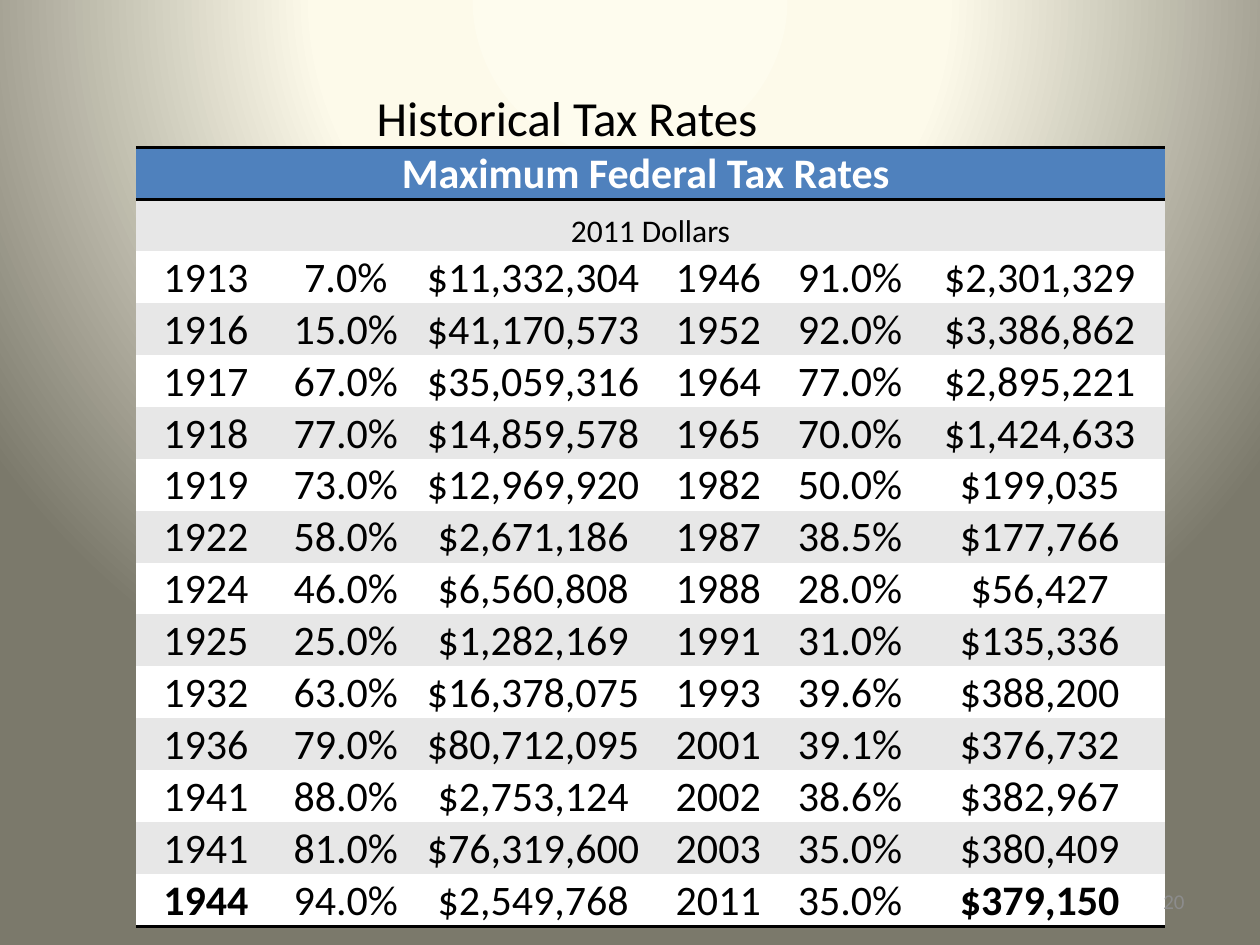
from dataclasses import dataclass

from pptx import Presentation
from pptx.dml.color import RGBColor
from pptx.enum.text import MSO_ANCHOR, PP_ALIGN
from pptx.oxml import parse_xml
from pptx.oxml.ns import nsdecls
from pptx.util import Cm, Pt


@dataclass(frozen=True)
class Theme:
    font: str = "Calibri"
    black: str = "000000"
    white: str = "FFFFFF"
    band: str = "E7E7E7"
    header: str = "4F81BD"
    muted: str = "8C8C8C"
    backdrop: tuple = ((0, "FEFCEE"), (40, "FDFAEA"), (100, "7B796B"))
    title_size: int = 28
    body_size: int = 24
    note_size: int = 18
    number_size: int = 12
    rule: int = 2


theme = Theme()


def write(tf, text, size, color, align=PP_ALIGN.CENTER, bold=False):
    p = tf.paragraphs[0]
    p.alignment = align
    r = p.add_run()
    r.text = text
    r.font.name = theme.font
    r.font.size = Pt(size)
    r.font.bold = bold
    r.font.color.rgb = RGBColor.from_string(color)


def add_rule(cell, side, index):
    cell._tc.get_or_add_tcPr().insert(index, parse_xml(
        f'<a:{side} {nsdecls("a")} w="{Pt(theme.rule)}"><a:solidFill>'
        f'<a:srgbClr val="{theme.black}"/></a:solidFill></a:{side}>'))


prs = Presentation()
prs.slide_width, prs.slide_height = Cm(25.4), Cm(19.05)
s = prs.slides.add_slide(prs.slide_layouts[6])

# Background: circular gradient centred above the slide
stops = "".join(f'<a:gs pos="{pos * 1000}"><a:srgbClr val="{color}"/></a:gs>'
                for pos, color in theme.backdrop)
s.element.cSld.insert(0, parse_xml(
    f'<p:bg {nsdecls("p", "a")}><p:bgPr><a:gradFill rotWithShape="1">'
    f'<a:gsLst>{stops}</a:gsLst><a:path path="circle">'
    '<a:fillToRect l="50000" t="-80000" r="50000" b="180000"/></a:path>'
    '</a:gradFill><a:effectLst/></p:bgPr></p:bg>'))

# Title
sp = s.shapes.add_textbox(Cm(0), Cm(0.76), Cm(22.86), Cm(3.18))
tf = sp.text_frame
tf.word_wrap = True
tf.vertical_anchor = MSO_ANCHOR.MIDDLE
write(tf, "Historical Tax Rates", theme.title_size, theme.black)

# Table content: year, top rate and income threshold, in two sets of columns
rates = [
    ("1913", "7.0%", "$11,332,304 ", "1946", "91.0%", "$2,301,329 "),
    ("1916", "15.0%", "$41,170,573 ", "1952", "92.0%", "$3,386,862 "),
    ("1917", "67.0%", "$35,059,316 ", "1964", "77.0%", "$2,895,221 "),
    ("1918", "77.0%", "$14,859,578 ", "1965", "70.0%", "$1,424,633 "),
    ("1919", "73.0%", "$12,969,920 ", "1982", "50.0%", "$199,035 "),
    ("1922", "58.0%", "$2,671,186 ", "1987", "38.5%", "$177,766 "),
    ("1924", "46.0%", "$6,560,808 ", "1988", "28.0%", "$56,427 "),
    ("1925", "25.0%", "$1,282,169 ", "1991", "31.0%", "$135,336 "),
    ("1932", "63.0%", "$16,378,075 ", "1993", "39.6%", "$388,200 "),
    ("1936", "79.0%", "$80,712,095 ", "2001", "39.1%", "$376,732 "),
    ("1941", "88.0%", "$2,753,124 ", "2002", "38.6%", "$382,967 "),
    ("1941", "81.0%", "$76,319,600 ", "2003", "35.0%", "$380,409 "),
    ("1944", "94.0%", "$2,549,768 ", "2011", "35.0%", "$379,150 "),
]
rows = [("Maximum Federal Tax Rates ",), ("2011 Dollars",)] + rates
widths = [2.82, 2.82, 4.93, 2.34, 2.97, 4.87]
last = len(rows) - 1

# Table without a built-in style
table = s.shapes.add_table(len(rows), len(widths), Cm(2.74), Cm(2.97),
                           Cm(sum(widths)), Cm(15.62)).table
table._tbl.tblPr.find("{*}tableStyleId").text = "{2D5ABB26-0587-4C30-8999-92F81FD0307C}"
for column, width in zip(table.columns, widths):
    column.width = Cm(width)

for i, row in enumerate(rows):
    if len(row) == 1:
        table.cell(i, 0).merge(table.cell(i, len(widths) - 1))
    size = theme.note_size if i == 1 else theme.body_size
    color = theme.white if i == 0 else theme.black
    fill = theme.header if i == 0 else theme.band if i % 2 else theme.white
    for j, cell in enumerate(table.rows[i].cells):
        cell.fill.solid()
        cell.fill.fore_color.rgb = RGBColor.from_string(fill)
        cell.vertical_anchor = MSO_ANCHOR.BOTTOM
        cell.margin_left = cell.margin_right = cell.margin_top = Cm(0.03)
        cell.margin_bottom = Cm(0)
        if i in (0, last):
            add_rule(cell, "lnB", 0)
        if i == 0:
            add_rule(cell, "lnT", 0)
        if j < len(row):
            bold = i == 0 or (i == last and j in (0, len(widths) - 1))
            write(cell.text_frame, row[j], size, color, bold=bold)

# Slide number
sp = s.shapes.add_textbox(Cm(18.2), Cm(17.65), Cm(5.93), Cm(1.02))
tf = sp.text_frame
tf.word_wrap = True
tf.vertical_anchor = MSO_ANCHOR.MIDDLE
write(tf, "20", theme.number_size, theme.muted, PP_ALIGN.RIGHT)

prs.save("out.pptx")
